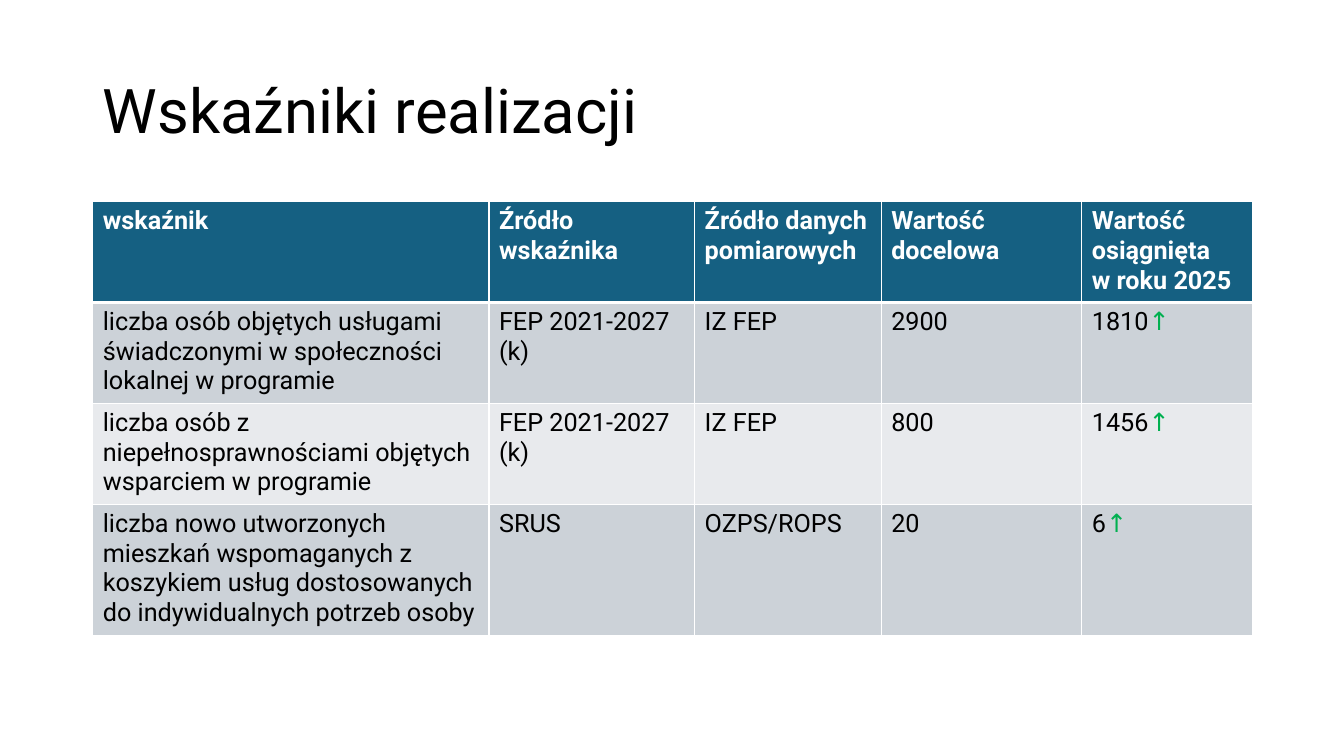
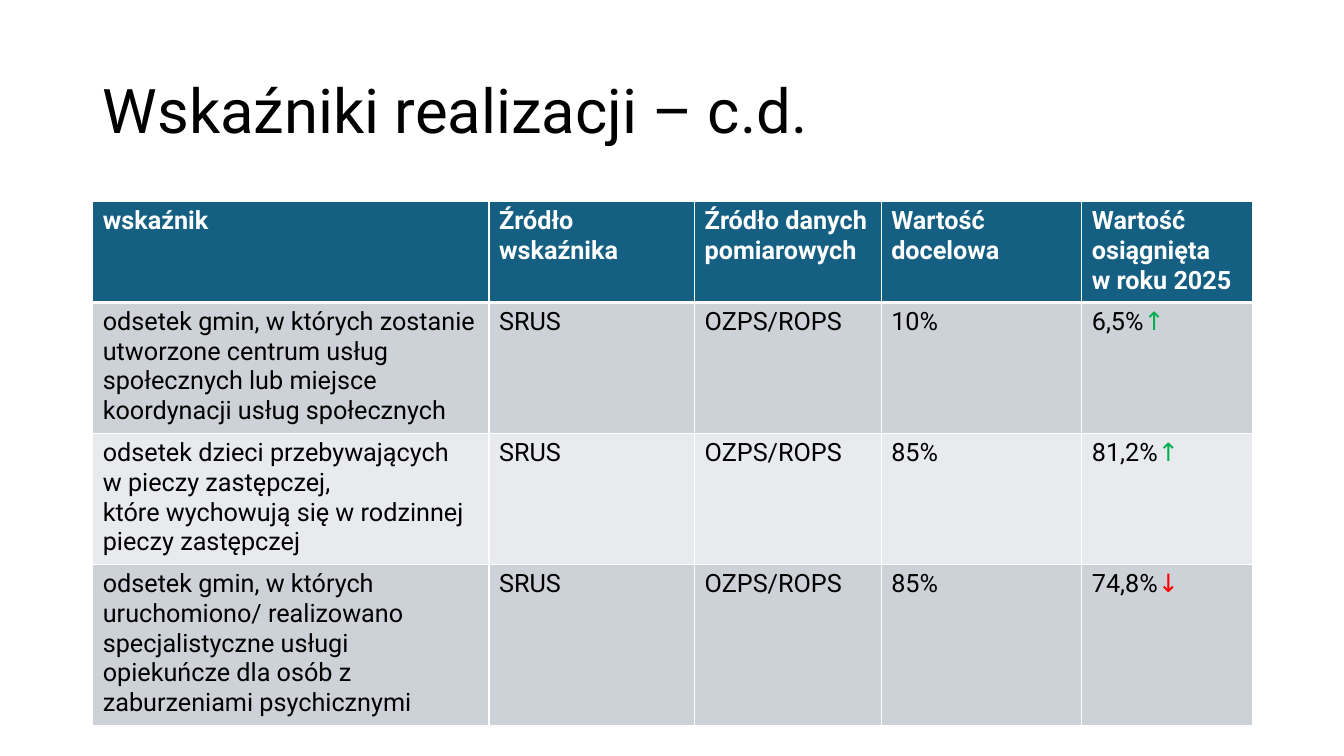
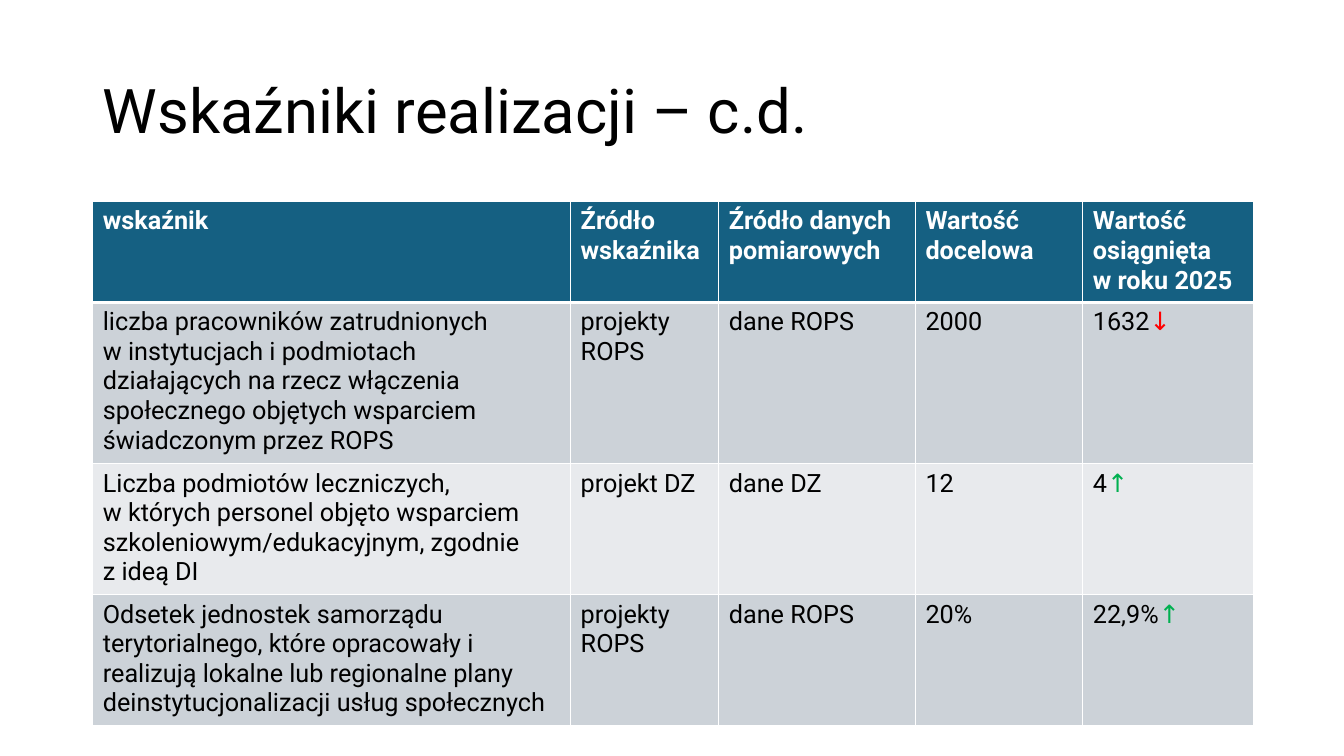
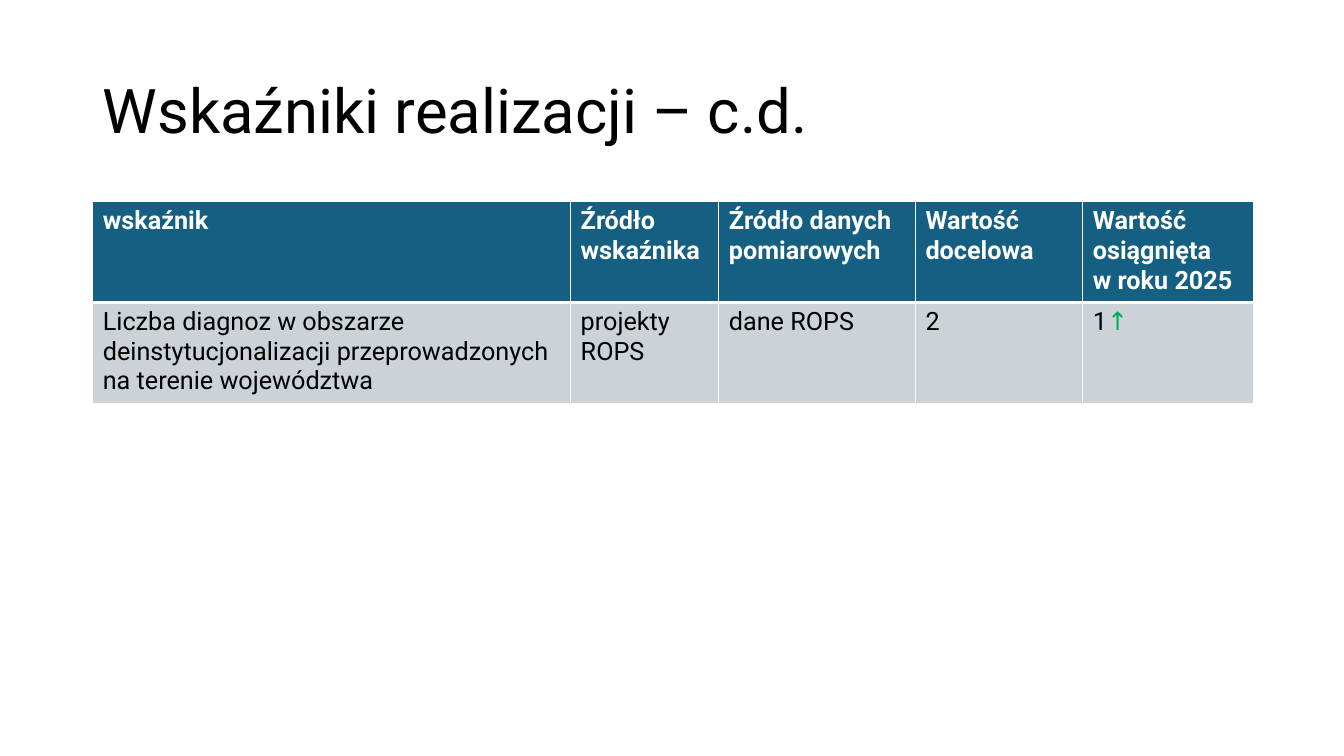
from dataclasses import dataclass

import pptx
import pptx.dml.color
import pptx.enum.text
import pptx.oxml
import pptx.oxml.ns
import pptx.slide
import pptx.table
import pptx.text.text
import pptx.util

WIDTH, HEIGHT = 13.33, 7.5
LEFT, CONTENT_WIDTH = 0.92, 11.5
TITLE_TOP, TITLE_HEIGHT = 0.4, 1.45
TABLE_TOP = 2
LINE_HEIGHT, CELL_PADDING = 0.29, 0.1
THIN, THICK = 1, 3

FONT = "Roboto"
COLORS = {
    "text": "000000",
    "white": "FFFFFF",
    "header": "156082",
    "odd": "CCD2D8",
    "even": "E8EAED",
    "↑": "00B050",
    "↓": "FF0000",
}

TITLE = "Wskaźniki realizacji"
TITLE_CONTINUED = f"{TITLE} – c.d."
HEADER = (
    "wskaźnik",
    "Źródło wskaźnika",
    "Źródło danych pomiarowych",
    "Wartość docelowa",
    "Wartość osiągnięta\nw roku 2025",
)
HEADER_LINES = 3
COLUMNS = (3.93, 2.04, 1.85, 1.99, 1.69)
COLUMNS_WIDE_NAME = (4.74, 1.47, 1.95, 1.66, 1.69)


@dataclass(frozen=True)
class Indicator:
    name: str
    source: str
    data_source: str
    target: str
    achieved: str
    trend: str
    lines: int


@dataclass(frozen=True)
class IndicatorSlide:
    title: str
    columns: tuple[float, ...]
    indicators: tuple[Indicator, ...]


SLIDES = (
    IndicatorSlide(TITLE, COLUMNS, (
        Indicator("liczba osób objętych usługami świadczonymi w społeczności lokalnej w programie",
                  "FEP 2021-2027 (k)", "IZ FEP", "2900", "1810", "↑", 3),
        Indicator("liczba osób z niepełnosprawnościami objętych wsparciem w programie",
                  "FEP 2021-2027 (k)", "IZ FEP", "800", "1456", "↑", 3),
        Indicator("liczba nowo utworzonych mieszkań wspomaganych z koszykiem usług "
                  "dostosowanych do indywidualnych potrzeb osoby",
                  "SRUS", "OZPS/ROPS", "20", "6", "↑", 4),
    )),
    IndicatorSlide(TITLE_CONTINUED, COLUMNS, (
        Indicator("odsetek gmin, w których zostanie utworzone centrum usług społecznych "
                  "lub miejsce koordynacji usług społecznych",
                  "SRUS", "OZPS/ROPS", "10%", "6,5%", "↑", 4),
        Indicator("odsetek dzieci przebywających\nw pieczy zastępczej,\n"
                  "które wychowują się w rodzinnej pieczy zastępczej",
                  "SRUS", "OZPS/ROPS", "85%", "81,2%", "↑", 4),
        Indicator("odsetek gmin, w których uruchomiono/ realizowano specjalistyczne usługi "
                  "opiekuńcze dla osób z zaburzeniami psychicznymi",
                  "SRUS", "OZPS/ROPS", "85%", "74,8%", "↓", 5),
    )),
    IndicatorSlide(TITLE_CONTINUED, COLUMNS_WIDE_NAME, (
        Indicator("liczba pracowników zatrudnionych\nw instytucjach i podmiotach działających "
                  "na rzecz włączenia społecznego objętych wsparciem świadczonym przez ROPS",
                  "projekty ROPS", "dane ROPS", "2000", "1632", "↓", 5),
        Indicator("Liczba podmiotów leczniczych,\nw których personel objęto wsparciem "
                  "szkoleniowym/edukacyjnym, zgodnie\nz ideą DI",
                  "projekt DZ", "dane DZ", "12", "4", "↑", 4),
        Indicator("Odsetek jednostek samorządu terytorialnego, które opracowały i realizują "
                  "lokalne lub regionalne plany deinstytucjonalizacji usług społecznych",
                  "projekty ROPS", "dane ROPS", "20%", "22,9%", "↑", 4),
    )),
    IndicatorSlide(TITLE_CONTINUED, COLUMNS_WIDE_NAME, (
        Indicator("Liczba diagnoz w obszarze deinstytucjonalizacji przeprowadzonych "
                  "na terenie województwa",
                  "projekty ROPS", "dane ROPS", "2", "1", "↑", 3),
    )),
)


def rgb(name: str) -> pptx.dml.color.RGBColor:
    return pptx.dml.color.RGBColor.from_string(COLORS[name])


def format_runs(p: pptx.text.text._Paragraph, size: float, color: str, bold: bool = False) -> None:
    for r in p.runs:
        r.font.name = FONT
        r.font.size = pptx.util.Pt(size)
        r.font.bold = bold
        r.font.color.rgb = rgb(color)


def set_borders(cell: pptx.table._Cell, top: float, bottom: float) -> None:
    """Give the cell white borders, thin at both sides; they must precede its fill."""
    tc_pr = cell._tc.get_or_add_tcPr()
    for i, (side, width) in enumerate((("L", THIN), ("R", THIN), ("T", top), ("B", bottom))):
        tc_pr.insert(i, pptx.oxml.parse_xml(
            f'<a:ln{side} {pptx.oxml.ns.nsdecls("a")} w="{pptx.util.Pt(width)}">'
            f'<a:solidFill><a:srgbClr val="{COLORS["white"]}"/></a:solidFill></a:ln{side}>'))


def fill_row(table: pptx.table.Table, row: int, texts: tuple[str, ...], lines: int) -> None:
    header = row == 0
    fill = "header" if header else "odd" if row % 2 else "even"
    table.rows[row].height = pptx.util.Inches(CELL_PADDING + LINE_HEIGHT * lines)
    for cell, text in zip(table.rows[row].cells, texts):
        cell.fill.solid()
        cell.fill.fore_color.rgb = rgb(fill)
        set_borders(cell, THICK if row == 1 else THIN, THICK if header else THIN)
        p = cell.text_frame.paragraphs[0]
        p.text = text
        format_runs(p, 18, "white" if header else "text", header)


def add_title(s: pptx.slide.Slide, title: str) -> None:
    box = s.shapes.add_textbox(*map(pptx.util.Inches, (LEFT, TITLE_TOP, CONTENT_WIDTH, TITLE_HEIGHT)))
    tf = box.text_frame
    tf.word_wrap = True
    tf.vertical_anchor = pptx.enum.text.MSO_ANCHOR.MIDDLE
    p = tf.paragraphs[0]
    p.text = title
    p.line_spacing = 0.9
    format_runs(p, 44, "text")


def add_indicator_table(s: pptx.slide.Slide, content: IndicatorSlide) -> None:
    indicators = content.indicators
    lines = HEADER_LINES + sum(i.lines for i in indicators)
    height = CELL_PADDING * (len(indicators) + 1) + LINE_HEIGHT * lines
    table = s.shapes.add_table(
        len(indicators) + 1, len(HEADER),
        *map(pptx.util.Inches, (LEFT, TABLE_TOP, CONTENT_WIDTH, height))).table
    for column, width in zip(table.columns, content.columns):
        column.width = pptx.util.Inches(width)
    fill_row(table, 0, HEADER, HEADER_LINES)
    for row, i in enumerate(indicators, start=1):
        fill_row(table, row, (i.name, i.source, i.data_source, i.target, i.achieved), i.lines)
        p = table.cell(row, len(HEADER) - 1).text_frame.paragraphs[0]
        r = p.add_run()
        r.text = i.trend
        r.font.name = FONT
        r.font.size = pptx.util.Pt(18)
        r.font.bold = False
        r.font.color.rgb = rgb(i.trend)


def main() -> None:
    prs = pptx.Presentation()
    prs.slide_width = pptx.util.Inches(WIDTH)
    prs.slide_height = pptx.util.Inches(HEIGHT)
    for content in SLIDES:
        s = prs.slides.add_slide(prs.slide_layouts[6])
        add_title(s, content.title)
        add_indicator_table(s, content)
    prs.save("out.pptx")


if __name__ == "__main__":
    main()
